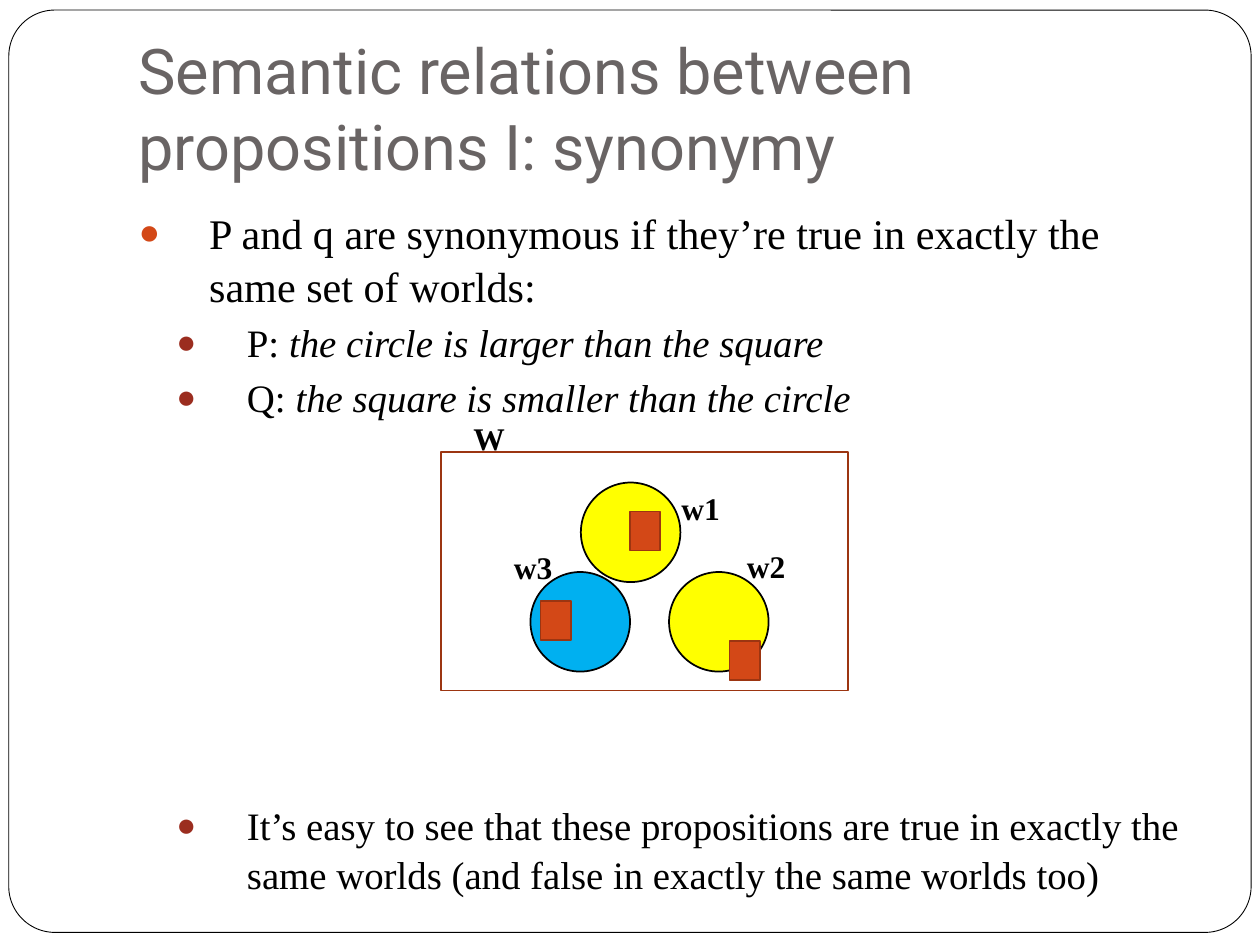
from lxml.etree import SubElement
from pptx import Presentation
from pptx.dml.color import RGBColor
from pptx.enum.shapes import MSO_SHAPE as SHAPE
from pptx.enum.text import MSO_ANCHOR as ANCHOR, MSO_AUTO_SIZE as FIT, PP_ALIGN as ALIGN
from pptx.oxml.ns import qn
from pptx.util import Inches, Pt

TITLE = "Semantic relations between propositions I: synonymy"
SERIF = "Times New Roman"
ORANGE, RUST, BROWN = "D34817", "9B2D1F", "9C3511"
YELLOW, BLUE, BLACK, WHITE, GREY = "FFFF00", "00B0F0", "000000", "FFFFFF", "696464"

# level, space before, [(text, italic)]
POINTS = [
    (0, 5.8, [("P and q are synonymous if they’re true in exactly the same set of worlds:", False)]),
    (1, 3.7, [("P: ", False), ("the circle is larger than the square", True)]),
    (1, 3.7, [("Q: ", False), ("the square is smaller than the circle", True)]),
    (1, 217, [("It’s easy to see that these propositions are true in exactly the "
               "same worlds (and false in exactly the same worlds too)", False)]),
]
LEVELS = [
    {"size": 24.1, "indent": 0.56, "bullet": ORANGE},
    {"size": 22.2, "indent": 0.86, "bullet": RUST},
]
HANGING = 0.56
CIRCLE, SQUARE = (0.79, 0.79), (0.24, 0.31)
WORLDS = [
    {"circle": (4.61, 3.83), "fill": YELLOW, "square": (5, 4.06)},
    {"circle": (4.21, 4.54), "fill": BLUE, "square": (4.29, 4.77)},
    {"circle": (5.31, 4.54), "fill": YELLOW, "square": (5.79, 5.09)},
]
LABELS = [
    ("W", (3.66, 3.28), 0.43),
    ("w1", (5.31, 3.83), 0.51),
    ("w2", (5.83, 4.29), 0.51),
    ("w3", (3.98, 4.3), 0.51),
]


def color(hex_value):
    return RGBColor.from_string(hex_value)


def place(shape, left, top, width, height):
    shape.left, shape.top = Inches(left), Inches(top)
    shape.width, shape.height = Inches(width), Inches(height)


def add_run(paragraph, text, size, font, ink, bold=False, italic=False):
    run = paragraph.add_run()
    run.text = text
    run.font.size, run.font.name = Pt(size), font
    run.font.bold, run.font.italic = bold, italic
    run.font.color.rgb = color(ink)


def add_outline(shapes, kind, corner, extent, fill, line, weight=1):
    shape = shapes.add_shape(kind, *map(Inches, corner + extent))
    shape.shadow.inherit = False
    if fill:
        shape.fill.solid()
        shape.fill.fore_color.rgb = color(fill)
    else:
        shape.fill.background()
    shape.line.color.rgb = color(line)
    shape.line.width = Pt(weight)
    return shape


def set_bullet(paragraph, indent, ink):
    props = paragraph._p.get_or_add_pPr()
    props.set("marL", str(Inches(indent)))
    props.set("indent", str(-Inches(HANGING)))
    tint = SubElement(props, qn("a:buClr"))
    SubElement(tint, qn("a:srgbClr"), val=ink)
    SubElement(props, qn("a:buSzPct"), val="85000")
    SubElement(props, qn("a:buFont"), typeface=SERIF)
    SubElement(props, qn("a:buChar"), char="●")


def fill_title(title):
    place(title, 1, 0.3, 8.5, 1.25)
    frame = title.text_frame
    frame.auto_size, frame.vertical_anchor = FIT.NONE, ANCHOR.BOTTOM
    frame.margin_bottom = Inches(0.1)
    heading = frame.paragraphs[0]
    heading.alignment = ALIGN.LEFT
    add_run(heading, TITLE, 36, "Roboto", GREY)


def fill_body(body):
    place(body, 1, 1.58, 8.5, 5.24)
    frame = body.text_frame
    frame.auto_size, frame.vertical_anchor = FIT.NONE, ANCHOR.TOP
    for index, (level, space, pieces) in enumerate(POINTS):
        point = frame.add_paragraph() if index else frame.paragraphs[0]
        point.level, point.line_spacing = level, 1.04
        point.space_before = Pt(space)
        style = LEVELS[level]
        set_bullet(point, style["indent"], style["bullet"])
        for text, italic in pieces:
            add_run(point, text, style["size"], SERIF, BLACK, italic=italic)


def draw_worlds(shapes):
    for world in WORLDS:
        add_outline(shapes, SHAPE.OVAL, world["circle"], CIRCLE, world["fill"], BLACK)
        add_outline(shapes, SHAPE.RECTANGLE, world["square"], SQUARE, ORANGE, BROWN)
    add_outline(shapes, SHAPE.RECTANGLE, (3.5, 3.59), (3.23, 1.89), None, BROWN)
    for text, corner, width in LABELS:
        label = shapes.add_textbox(*map(Inches, corner + (width, 0.4)))
        label.text_frame.word_wrap = False
        label.text_frame.auto_size = FIT.SHAPE_TO_FIT_TEXT
        add_run(label.text_frame.paragraphs[0], text, 18, SERIF, BLACK, bold=True)


def main():
    deck = Presentation()
    deck.slide_width, deck.slide_height = Inches(10), Inches(7.5)
    slide = deck.slides.add_slide(deck.slide_layouts[1])
    shapes = slide.shapes
    frame = add_outline(shapes, SHAPE.ROUNDED_RECTANGLE, (0.07, 0.08), (9.86, 7.32),
                        WHITE, BLACK, 0.5)
    frame.adjustments[0] = 0.05
    shapes._spTree.insert(2, frame._element)
    fill_title(shapes.title)
    fill_body(slide.placeholders[1])
    draw_worlds(shapes.add_group_shape().shapes)
    deck.save("out.pptx")


if __name__ == "__main__":
    main()
